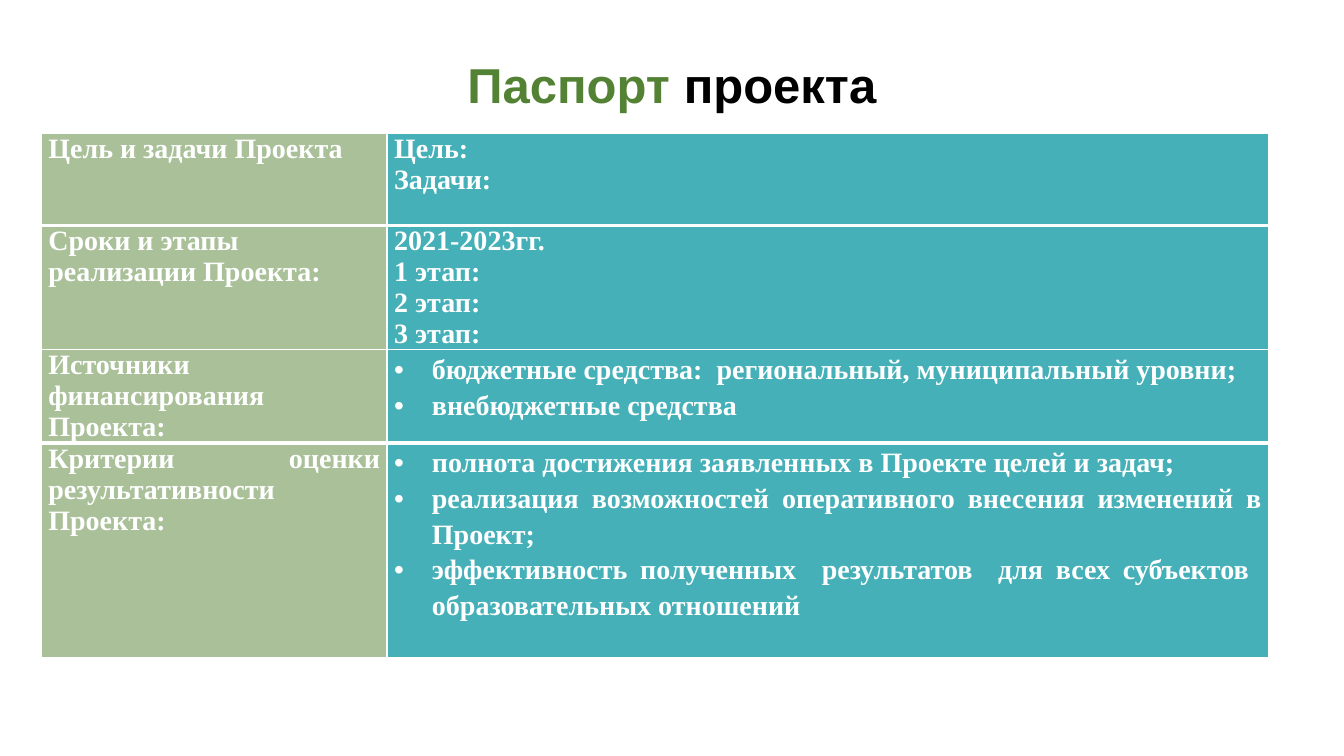
from lxml.etree import SubElement
from pptx import Presentation
from pptx.dml.color import RGBColor
from pptx.enum.text import PP_ALIGN
from pptx.oxml.ns import qn
from pptx.util import Pt

COLORS = {"green": "548235", "teal": "45B0B7", "white": "FFFFFF", "black": "000000"}
COLUMN_WIDTHS = [247, 630]
ROW_HEIGHTS = [66, 88.5, 66, 153]
THIN, THICK = 1, 3
# Width of each horizontal rule, from the top edge to the bottom edge
RULES = [THIN, THICK, THIN, THICK, THIN]

# Label, label alignment, content lines, whether the content is bulleted
PASSPORT = [
    ("Цель и задачи Проекта", PP_ALIGN.LEFT, ["Цель:", "Задачи:"], False),
    ("Сроки и этапы реализации Проекта:", PP_ALIGN.LEFT,
     ["2021-2023гг.", "1 этап:", "2 этап:", "3 этап:"], False),
    ("Источники финансирования Проекта:", PP_ALIGN.LEFT,
     ["бюджетные средства:  региональный, муниципальный уровни;",
      "внебюджетные средства"], True),
    ("Критерии оценки результативности Проекта:", PP_ALIGN.JUSTIFY,
     ["полнота достижения заявленных в Проекте целей и задач;",
      "реализация возможностей оперативного внесения изменений в Проект;",
      "эффективность полученных  результатов  для всех субъектов  "
      "образовательных отношений"], True),
]


def format_run(run, size, font_name, color):
    run.font.size = Pt(size)
    run.font.name = font_name
    run.font.bold = True
    run.font.color.rgb = RGBColor.from_string(COLORS[color])


def add_bullet(paragraph):
    paragraph.line_spacing = 1.15
    properties = paragraph._p.get_or_add_pPr()
    properties.set("marL", str(Pt(27)))
    properties.set("indent", str(Pt(-27)))
    SubElement(properties, qn("a:buFont"), typeface="Arial")
    SubElement(properties, qn("a:buChar"), char="•")


def add_borders(cell, top, bottom):
    properties = cell._tc.get_or_add_tcPr()
    for side, width in (("L", THIN), ("R", THIN), ("T", top), ("B", bottom)):
        line = SubElement(properties, qn(f"a:ln{side}"), w=str(Pt(width)))
        fill = SubElement(line, qn("a:solidFill"))
        SubElement(fill, qn("a:srgbClr"), val=COLORS["white"])


def fill_cell(cell, lines, color, alignment, bulleted=False):
    cell.margin_left = cell.margin_right = Pt(5)
    cell.margin_top = cell.margin_bottom = 0
    cell.fill.solid()
    cell.fill.fore_color.rgb = RGBColor.from_string(COLORS[color])
    cell.text_frame.text = "\n".join(lines)
    for paragraph in cell.text_frame.paragraphs:
        paragraph.alignment = alignment
        format_run(paragraph.runs[0], 20, "Times New Roman", "white")
        if bulleted:
            add_bullet(paragraph)


def make_half_transparent(cell):
    color = cell._tc.tcPr.find(qn("a:solidFill")).find(qn("a:srgbClr"))
    SubElement(color, qn("a:alpha"), val="50000")


def add_title(slide, left, top, width, height):
    text_frame = slide.shapes.add_textbox(Pt(left), Pt(top), Pt(width), Pt(height)).text_frame
    text_frame.word_wrap = True
    paragraph = text_frame.paragraphs[0]
    paragraph.alignment = PP_ALIGN.CENTER
    paragraph.line_spacing = 0.9
    for text, color in (("Паспорт ", "green"), ("проекта", "black")):
        run = paragraph.add_run()
        run.text = text
        format_run(run, 35, "Arial", color)


def add_passport_table(slide, left, top):
    table = slide.shapes.add_table(
        len(PASSPORT), len(COLUMN_WIDTHS), Pt(left), Pt(top),
        Pt(sum(COLUMN_WIDTHS)), Pt(sum(ROW_HEIGHTS))).table
    table.first_row = table.horz_banding = False
    for column, width in zip(table.columns, COLUMN_WIDTHS):
        column.width = Pt(width)
    for index, (label, alignment, lines, bulleted) in enumerate(PASSPORT):
        table.rows[index].height = Pt(ROW_HEIGHTS[index])
        label_cell, content_cell = table.cell(index, 0), table.cell(index, 1)
        for cell in (label_cell, content_cell):
            add_borders(cell, RULES[index], RULES[index + 1])
        fill_cell(label_cell, [label], "green", alignment)
        make_half_transparent(label_cell)
        fill_cell(content_cell, lines, "teal",
                  PP_ALIGN.JUSTIFY if bulleted else PP_ALIGN.LEFT, bulleted)


def main():
    presentation = Presentation()
    presentation.slide_width, presentation.slide_height = Pt(960), Pt(540)
    slide = presentation.slides.add_slide(presentation.slide_layouts[6])
    # Table first, heading above it
    add_passport_table(slide, 29.5, 95)
    add_title(slide, 0, 40, 960, 70)
    presentation.save("out.pptx")


if __name__ == "__main__":
    main()
